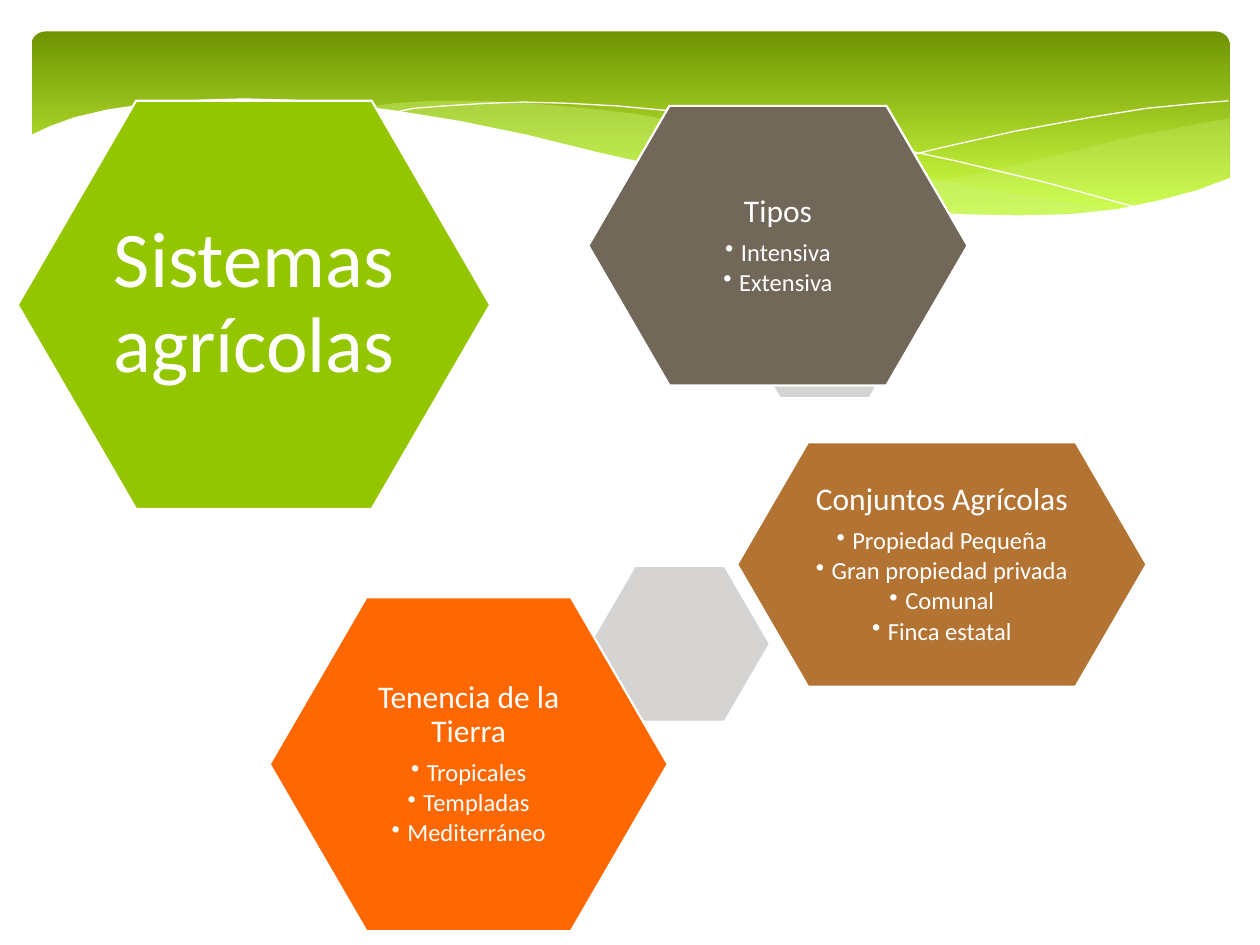
import pptx
import pptx.dml.color
import pptx.enum.shapes
import pptx.enum.text
import pptx.oxml
import pptx.oxml.ns
import pptx.util
from pptx.util import Pt

WHITE, PALE_GREEN, GREY = "FFFFFF", "CAF278", "D5D4D2"

# Outlines of the banner, in points
RIGHT_WAVE = [
    (702, 67.7), (682.6, 71.3), (663.1, 74.9), (641.5, 79.2), (619.9, 85),
    (579.6, 94.3), (542.2, 103), (508.3, 109.4), (475.9, 115.2), (497.5, 118.1),
    (517.7, 120.2), (545, 122.4), (570.2, 123.8), (601.2, 123.8), (627.8, 121.7),
    (651.6, 117.4), (673.2, 112.3), (693.4, 105.8), (702.7, 101.5), (702.7, 67.7)]
MIDDLE_WAVE = [
    (643, 120.2), (623.5, 118.1), (602.6, 114.5), (581, 110.9), (558, 107.3),
    (533.5, 102.2), (508.3, 96.5), (481, 90.7), (452.9, 83.5), (420.5, 76.3),
    (389.5, 69.8), (361.4, 64.8), (334.8, 61.9), (302.4, 59), (273.6, 57.6),
    (247.7, 57.6), (225.4, 59), (205.9, 61.9), (232.6, 64.8), (260.6, 69.8),
    (290.9, 76.3), (323.3, 83.5), (353.5, 90.7), (381.6, 97.2), (407.5, 103),
    (432.7, 108), (456.5, 112.3), (478.8, 115.9), (500.4, 118.8), (519.8, 121),
    (547.9, 123.1), (573.1, 124.6), (596.2, 124.6), (617, 123.1)]
FALLING_CURVE = [
    (222.5, 64.8), (236.2, 61.9), (254.2, 60.5), (278.6, 59), (299.5, 58.3),
    (324, 59), (352.1, 60.5), (383.8, 63.4), (419, 67.7), (457.9, 74.2),
    (500.4, 82.1), (547.2, 92.2), (598.3, 104.4), (653, 119.5)]
RISING_CURVE = [
    (441.4, 108.7), (470.2, 101.5), (500.4, 93.6), (538.6, 84.2), (580.3, 74.9),
    (623.5, 67), (655.2, 61.9), (684.7, 59), (702, 57.6)]
WHITE_EDGE = [
    (703.4, 101.5), (684, 108.7), (662.4, 114.5), (638.6, 119.5), (612, 122.4),
    (582.5, 123.1), (547.9, 122.4), (509.8, 118.8), (466.6, 112.3), (416.9, 103.7),
    (380.9, 95.8), (342, 87.1), (301, 77), (262.8, 69.1), (227.5, 63.4),
    (195.1, 59), (165.6, 56.9), (139, 56.2), (115.9, 56.9), (85.7, 59),
    (61.2, 62.6), (42.5, 67), (28.8, 72), (18, 77), (16.6, 77),
    (16.6, 161.3), (703.4, 161.3)]

# Place, colour, text margin as a share of the hexagon, heading, items
TOPICS = [
    ((336.2, 60.5, 216.7, 159.8), "71685A", 0.15, "Tipos", ["Intensiva", "Extensiva"]),
    ((421.2, 252.7, 234, 139.7), "B27333", 0.14, "Conjuntos Agrícolas",
     ["Propiedad Pequeña", "Gran propiedad privada", "Comunal", "Finca estatal"]),
    ((154.1, 341.3, 227.5, 190.8), "FF6700", 0.16, "Tenencia de la Tierra",
     ["Tropicales", "Templadas", "Mediterráneo"]),
]


def color(code):
    return pptx.dml.color.RGBColor.from_string(code)


class SlideBuilder:
    font = "Calibri"
    heading_size, item_size = 18, 14
    bullet_indent = 9

    def __init__(self, slide):
        self.slide = slide

    def finish(self, shape, fill=None, line=None, width=0, opacity=100):
        shape.shadow.inherit = False
        if fill:
            shape.fill.solid()
            shape.fill.fore_color.rgb = color(fill)
        else:
            shape.fill.background()
        if opacity < 100:
            tint = shape.fill._xPr.find(".//" + pptx.oxml.ns.qn("a:srgbClr"))
            alpha = pptx.oxml.parse_xml(
                f'<a:alpha {pptx.oxml.ns.nsdecls("a")} val="{opacity * 1000}"/>')
            tint.append(alpha)
        if line:
            shape.line.color.rgb = color(line)
            shape.line.width = Pt(width)
        else:
            shape.line.fill.background()

    def preset(self, kind, place, adjustment):
        shape = self.slide.shapes.add_shape(kind, *map(Pt, place))
        shape.adjustments[0] = adjustment
        return shape

    def banner(self, place, top, bottom):
        kind = pptx.enum.shapes.MSO_SHAPE.ROUNDED_RECTANGLE
        shape = self.preset(kind, place, 0.07)
        self.finish(shape)
        shape.fill.gradient()
        shape.fill.gradient_angle = 270
        for stop, code, position in zip(shape.fill.gradient_stops, (top, bottom), (0, 0.9)):
            stop.color.rgb = color(code)
            stop.position = position

    def outline(self, points, closed=True, **style):
        start, *rest = [(Pt(x), Pt(y)) for x, y in points]
        builder = self.slide.shapes.build_freeform(*start)
        builder.add_line_segments(rest, close=closed)
        self.finish(builder.convert_to_shape(), **style)

    def hexagon(self, place, fill, line=None):
        shape = self.preset(pptx.enum.shapes.MSO_SHAPE.HEXAGON, place, 0.29)
        self.finish(shape, fill, line, 1.25)

    def label(self, place, margin, heading, items=(), size=heading_size, inset=2.2):
        """Centre a heading and its bulleted items inside the hexagon at place."""
        left, top, width, height = place
        inner = (left + margin * width, top + margin * height,
                 width * (1 - 2 * margin), height * (1 - 2 * margin))
        frame = self.slide.shapes.add_textbox(*map(Pt, inner)).text_frame
        frame.word_wrap = True
        frame.vertical_anchor = pptx.enum.text.MSO_ANCHOR.MIDDLE
        frame.margin_left = frame.margin_right = Pt(inset)
        frame.margin_top = frame.margin_bottom = Pt(inset)
        frame.text = "\n".join([heading, *items])
        first, *others = frame.paragraphs
        self.format(first, size, 0.35)
        for para in others:
            self.format(para, self.item_size, 0.15)
            self.bullet(para)

    def format(self, para, size, gap):
        para.alignment = pptx.enum.text.PP_ALIGN.CENTER
        para.line_spacing = 0.9
        para.space_after = Pt(gap * size)
        for span in para.runs:
            span.font.name = self.font
            span.font.size = Pt(size)
            span.font.color.rgb = color(WHITE)

    def bullet(self, para):
        para.level = 1
        properties = para._p.get_or_add_pPr()
        properties.set("marL", str(Pt(self.bullet_indent)))
        properties.set("indent", str(-Pt(self.bullet_indent)))
        properties.append(pptx.oxml.parse_xml(
            f'<a:buChar {pptx.oxml.ns.nsdecls("a")} char="•"/>'))


def main():
    deck = pptx.Presentation()
    deck.slide_width, deck.slide_height = Pt(720), Pt(540)
    page = SlideBuilder(deck.slides.add_slide(deck.slide_layouts[6]))

    page.banner((18, 18, 684.7, 112.3), "6F9400", "D0FF44")
    page.outline(RIGHT_WAVE, fill=PALE_GREEN, opacity=29)
    page.outline(MIDDLE_WAVE, fill=PALE_GREEN, opacity=40)
    for curve in (FALLING_CURVE, RISING_CURVE):
        page.outline(curve, closed=False, line=WHITE)
    page.outline(WHITE_EDGE, fill=WHITE)

    main_place = (10.1, 57.6, 270, 233.3)
    page.hexagon(main_place, "94C600", WHITE)
    page.label(main_place, 0.17, "Sistemas agrícolas", size=45, inset=4.3)

    for left, top in ((420.5, 139), (337.7, 324)):
        page.hexagon((left, top, 101.5, 87.8), GREY)
    for place, fill, margin, heading, items in TOPICS:
        page.hexagon(place, fill, WHITE)
        page.label(place, margin, heading, items)

    deck.save("out.pptx")


if __name__ == "__main__":
    main()
